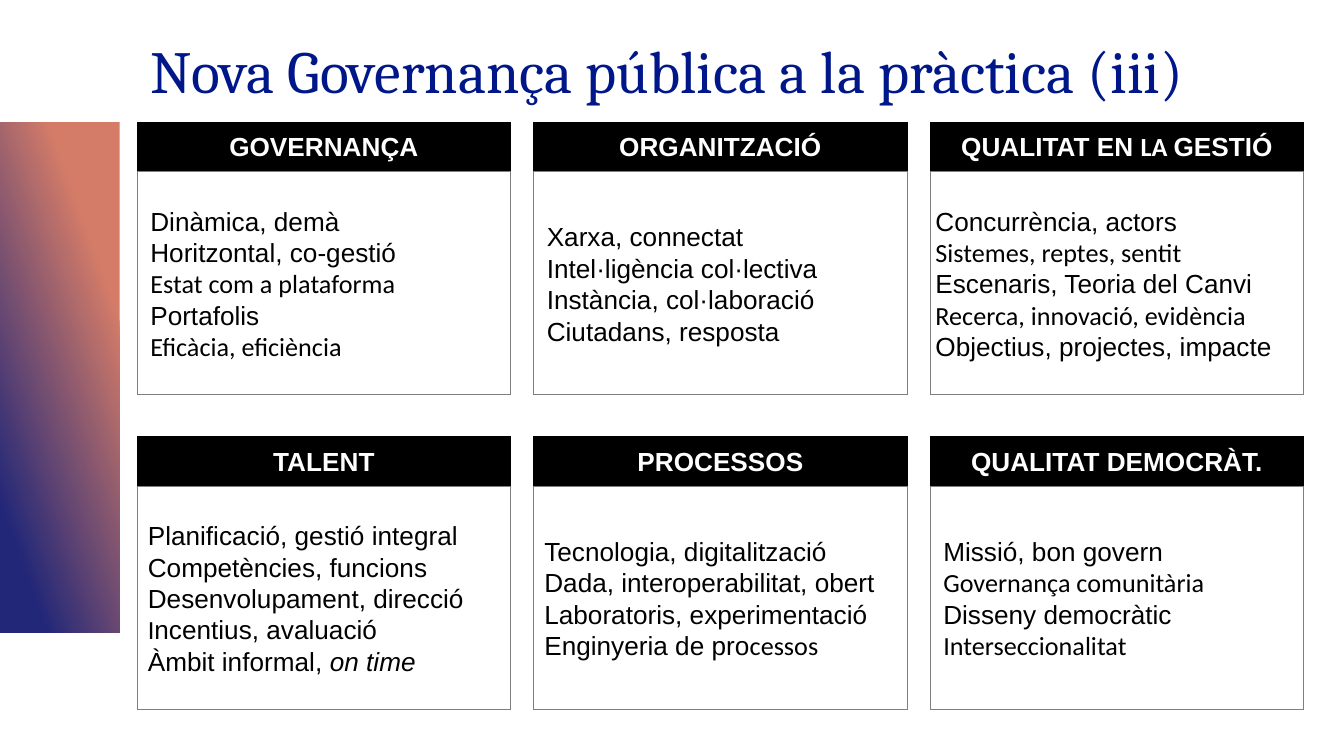
from pptx import Presentation
from pptx.dml.color import RGBColor
from pptx.enum.shapes import MSO_SHAPE
from pptx.enum.text import MSO_ANCHOR, MSO_AUTO_SIZE, PP_ALIGN
from pptx.util import Inches, Pt

RECTANGLE = MSO_SHAPE.RECTANGLE
MIDDLE, BOTTOM = MSO_ANCHOR.MIDDLE, MSO_ANCHOR.BOTTOM
LEFT, CENTER = PP_ALIGN.LEFT, PP_ALIGN.CENTER
NO_AUTOFIT = MSO_AUTO_SIZE.NONE

BLACK = RGBColor(0x00, 0x00, 0x00)
WHITE = RGBColor(0xFF, 0xFF, 0xFF)
GRAY = RGBColor(0x7F, 0x7F, 0x7F)
BLUE = RGBColor(0x00, 0x17, 0x89)
SALMON = RGBColor(0xD4, 0x7C, 0x68)
NAVY = RGBColor(0x22, 0x27, 0x78)

HAIRLINE = Pt(0.01)
TITLE_FORMAT = {"name": "Cambria", "size": Pt(32)}
HEADER_FORMAT = {"name": "Arial", "size": Pt(14), "bold": True}
BODY_FORMAT = {"name": "Arial", "size": Pt(14)}
CALIBRI = {"name": "Calibri"}
ITALIC = {"italic": True}

# Card grid, in inches
SLIDE_WIDTH = 10
GRID_LEFT, GRID_TOP = 1.02, 0.91
COLUMN_STEP, ROW_STEP = 2.95, 2.34
CARD_WIDTH, HEADER_HEIGHT = 2.78, 0.36
BODY_OFFSET, BODY_HEIGHT = 0.37, 1.66

# Each card: header line, body lines, side inset.
# Each line is a list of (text, format changes).
CARDS = [
    ([("GOVERNANÇA", {})],
     [[("Dinàmica, demà", {})],
      [("Horitzontal, co-gestió", {})],
      [("Estat com a plataforma", CALIBRI)],
      [("Portafolis", {})],
      [("Eficàcia, eficiència", CALIBRI)]], 0.1),
    ([("ORGANITZACIÓ", {})],
     [[("Xarxa, connectat", {})],
      [("Intel·ligència col·lectiva", {})],
      [("Instància, col·laboració", {})],
      [("Ciutadans, resposta", {})]], 0.1),
    ([("QUALITAT EN ", {}), ("LA ", CALIBRI), ("GESTIÓ", {})],
     [[("Concurrència, actors", {})],
      [("Sistemes, reptes, sentit", CALIBRI)],
      [("Escenaris, Teoria del Canvi", {})],
      [("Recerca, innovació, evidència", CALIBRI)],
      [("Objectius, projectes, impacte", {})]], 0.04),
    ([("TALENT", {})],
     [[("Planificació, gestió integral", {})],
      [("Competències, funcions", {})],
      [("Desenvolupament, direcció", {})],
      [("I", CALIBRI), ("ncentius, avaluació", {})],
      [("Àmbit informal, ", {}), ("on time", ITALIC)]], 0.08),
    ([("PROCESSOS", {})],
     [[("Tecnologia, digitalització", {})],
      [("Dada, interoperabilitat, obert", {})],
      [("Laboratoris, experimentació", {})],
      [("Enginyeria de pro", {}), ("cessos", CALIBRI)]], 0.08),
    ([("QUALITAT DEMOCRÀT.", {})],
     [[("Missió, bon govern", {})],
      [("Governança comunitària", CALIBRI)],
      [("Disseny democràtic", {})],
      [("Interseccionalitat", CALIBRI)]], 0.1),
]


def add_span(para, text, color, values):
    span = para.add_run()
    span.text = text
    span.font.color.rgb = color
    for name, value in values.items():
        setattr(span.font, name, value)


def write_lines(frame, lines, color, values, align):
    for index, line in enumerate(lines):
        para = frame.add_paragraph() if index else frame.paragraphs[0]
        para.alignment = align
        for text, changes in line:
            add_span(para, text, color, {**values, **changes})


def add_box(shapes, left, top, width, height, fill, line, inset=0.1):
    box = shapes.add_shape(RECTANGLE, Inches(left), Inches(top),
                           Inches(width), Inches(height))
    box.shadow.inherit = False
    box.fill.solid()
    box.fill.fore_color.rgb = fill
    box.line.color.rgb = line
    box.line.width = HAIRLINE
    frame = box.text_frame
    frame.word_wrap = True
    frame.vertical_anchor = MIDDLE
    frame.margin_left = frame.margin_right = Inches(inset)
    return box


def add_card(page, left, top, header, lines, inset):
    group = page.shapes.add_group_shape()
    body_box = add_box(group.shapes, left, top + BODY_OFFSET, CARD_WIDTH,
                       BODY_HEIGHT, WHITE, GRAY, inset)
    write_lines(body_box.text_frame, lines, BLACK, BODY_FORMAT, LEFT)
    header_box = add_box(group.shapes, left, top, CARD_WIDTH,
                         HEADER_HEIGHT, BLACK, BLACK)
    write_lines(header_box.text_frame, [header], WHITE, HEADER_FORMAT, CENTER)


def add_side_band(page):
    band = page.shapes.add_shape(RECTANGLE, Inches(0), Inches(GRID_TOP),
                                 Inches(0.89), Inches(3.8))
    band.shadow.inherit = False
    band.line.fill.background()
    band.fill.gradient()
    band.fill.gradient_angle = 200
    for stop, position, color in zip(band.fill.gradient_stops,
                                     (0.23, 0.85), (SALMON, NAVY)):
        stop.position = position
        stop.color.rgb = color


def set_title(page, text):
    title = page.shapes.title
    title.left, title.top = Inches(1.02), Inches(0.25)
    title.width, title.height = Inches(8.67), Inches(0.59)
    frame = title.text_frame
    frame.auto_size = NO_AUTOFIT
    frame.vertical_anchor = BOTTOM
    write_lines(frame, [[(text, {})]], BLUE, TITLE_FORMAT, LEFT)
    frame.paragraphs[0].line_spacing = 0.9


def main():
    # Widescreen page, 16 to 9
    deck = Presentation()
    deck.slide_width = Inches(SLIDE_WIDTH)
    deck.slide_height = Inches(SLIDE_WIDTH * 9 / 16)
    page = deck.slides.add_slide(deck.slide_layouts[5])

    # Gradient band and title
    add_side_band(page)
    set_title(page, "Nova Governança pública a la pràctica (iii)")

    # Three columns by two rows of cards
    for index, (header, lines, inset) in enumerate(CARDS):
        row, column = divmod(index, 3)
        add_card(page, GRID_LEFT + column * COLUMN_STEP,
                 GRID_TOP + row * ROW_STEP, header, lines, inset)

    deck.save("out.pptx")


if __name__ == "__main__":
    main()
